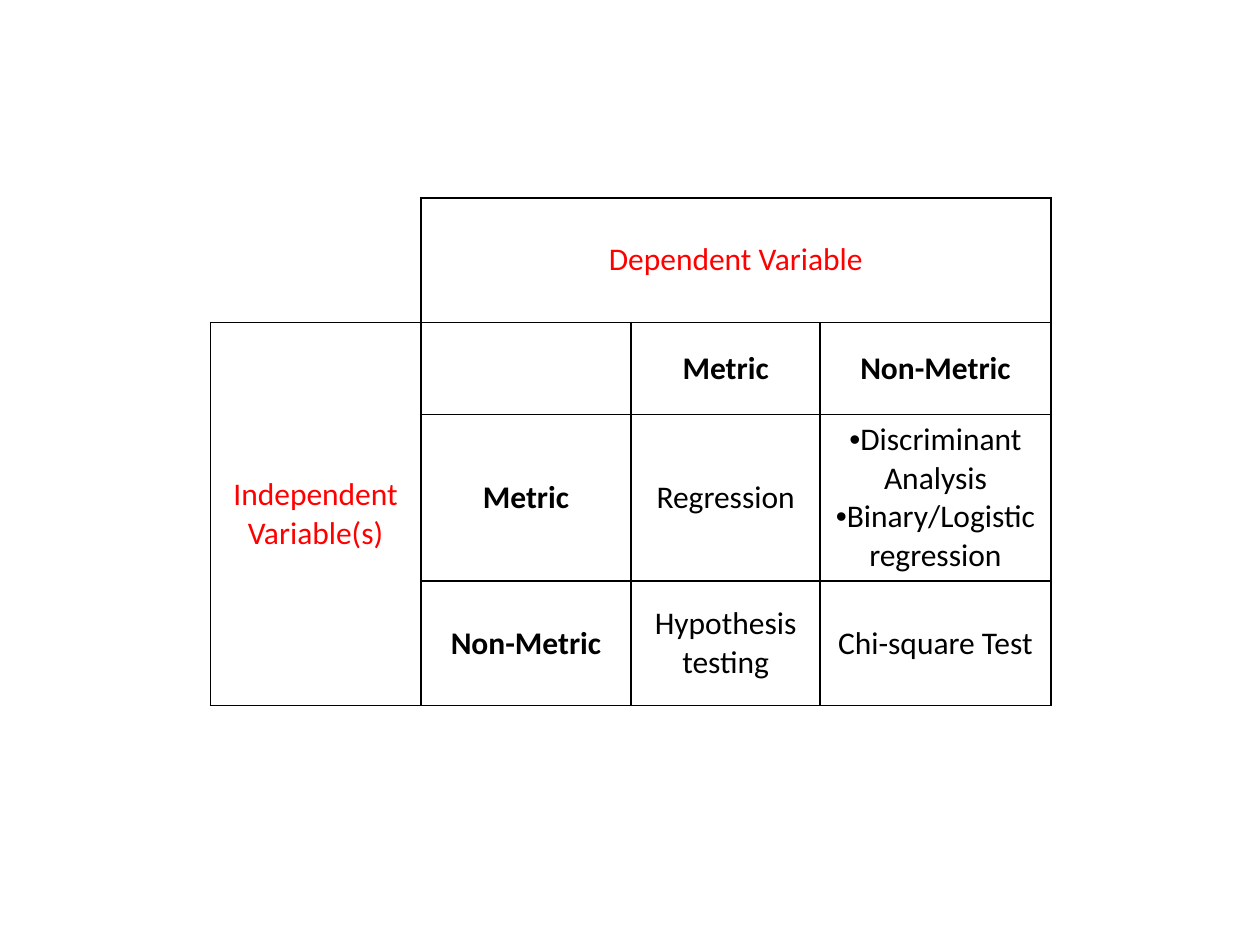
from dataclasses import dataclass

from lxml.etree import SubElement
from pptx import Presentation
from pptx.dml.color import RGBColor
from pptx.enum.text import MSO_ANCHOR, PP_ALIGN
from pptx.oxml.ns import qn
from pptx.table import Table, _Cell
from pptx.util import Inches, Pt


@dataclass(frozen=True)
class Theme:
    """Colours, font and sizes of the slide."""

    heading: str = "FF0000"
    ink: str = "000000"
    font: str = "Calibri"
    text_size: float = 18
    border_width: float = 1


@dataclass(frozen=True)
class Entry:
    """Wording of one table cell and the cells it spans."""

    row: int
    column: int
    lines: tuple[str, ...]
    color: str
    bold: bool = False
    bulleted: bool = False
    row_span: int = 1
    column_span: int = 1


THEME = Theme()
COLUMN_WIDTHS = (1.67, 1.67, 1.5, 1.83)
ROW_HEIGHTS = (0.99, 0.73, 1.24, 0.99)
ENTRIES = (
    Entry(0, 1, ("Dependent Variable",), THEME.heading, column_span=3),
    Entry(1, 0, ("Independent Variable(s)",), THEME.heading, row_span=3),
    Entry(1, 2, ("Metric",), THEME.ink, bold=True),
    Entry(1, 3, ("Non-Metric",), THEME.ink, bold=True),
    Entry(2, 1, ("Metric",), THEME.ink, bold=True),
    Entry(2, 2, ("Regression",), THEME.ink),
    Entry(2, 3, ("Discriminant Analysis", "Binary/Logistic regression"), THEME.ink, bulleted=True),
    Entry(3, 1, ("Non-Metric",), THEME.ink, bold=True),
    Entry(3, 2, ("Hypothesis testing",), THEME.ink),
    Entry(3, 3, ("Chi-square Test",), THEME.ink),
)


def style_cell(cell: _Cell, hidden_sides: str = "") -> None:
    """Clear the fill and draw every border except the hidden sides."""
    cell.fill.background()
    properties = cell._tc.get_or_add_tcPr()
    for position, side in enumerate("LRTB"):
        border = SubElement(properties, qn(f"a:ln{side}"), w=str(Pt(THEME.border_width)))
        if side in hidden_sides:
            SubElement(border, qn("a:noFill"))
        else:
            paint = SubElement(border, qn("a:solidFill"))
            SubElement(paint, qn("a:srgbClr"), val=THEME.ink)
        properties.insert(position, border)


def write_entry(table: Table, entry: Entry) -> None:
    """Merge the spanned cells and write the centred wording."""
    cell = table.cell(entry.row, entry.column)
    if entry.row_span > 1 or entry.column_span > 1:
        last_row = entry.row + entry.row_span - 1
        last_column = entry.column + entry.column_span - 1
        cell.merge(table.cell(last_row, last_column))
    cell.vertical_anchor = MSO_ANCHOR.MIDDLE
    frame = cell.text_frame
    for index, line in enumerate(entry.lines):
        paragraph = frame.add_paragraph() if index else frame.paragraphs[0]
        paragraph.alignment = PP_ALIGN.CENTER
        if entry.bulleted:
            properties = paragraph._p.get_or_add_pPr()
            properties.set("marL", "0")
            properties.set("indent", "0")
            SubElement(properties, qn("a:buFont"), typeface="Arial")
            SubElement(properties, qn("a:buChar"), char="•")
        run = paragraph.add_run()
        run.text = line
        run.font.name = THEME.font
        run.font.size = Pt(THEME.text_size)
        run.font.bold = entry.bold
        run.font.color.rgb = RGBColor.from_string(entry.color)


def main() -> None:
    """Build the table of methods by variable type."""
    presentation = Presentation()
    presentation.slide_width = Inches(10)
    presentation.slide_height = Inches(7.5)
    slide = presentation.slides.add_slide(presentation.slide_layouts[6])
    methods = slide.shapes.add_table(
        len(ROW_HEIGHTS), len(COLUMN_WIDTHS),
        Inches(1.67), Inches(1.57), Inches(6.67), Inches(4.02),
    )
    table = methods.table
    table.first_row = False
    table.horz_banding = False
    for column, width in zip(table.columns, COLUMN_WIDTHS):
        column.width = Inches(width)
    for row, height in zip(table.rows, ROW_HEIGHTS):
        row.height = Inches(height)
    methods.height = Inches(4.02)
    for cell in table.iter_cells():
        style_cell(cell, "LT" if cell._tc is table.cell(0, 0)._tc else "")
    for entry in ENTRIES:
        write_entry(table, entry)
    presentation.save("out.pptx")


if __name__ == "__main__":
    main()
